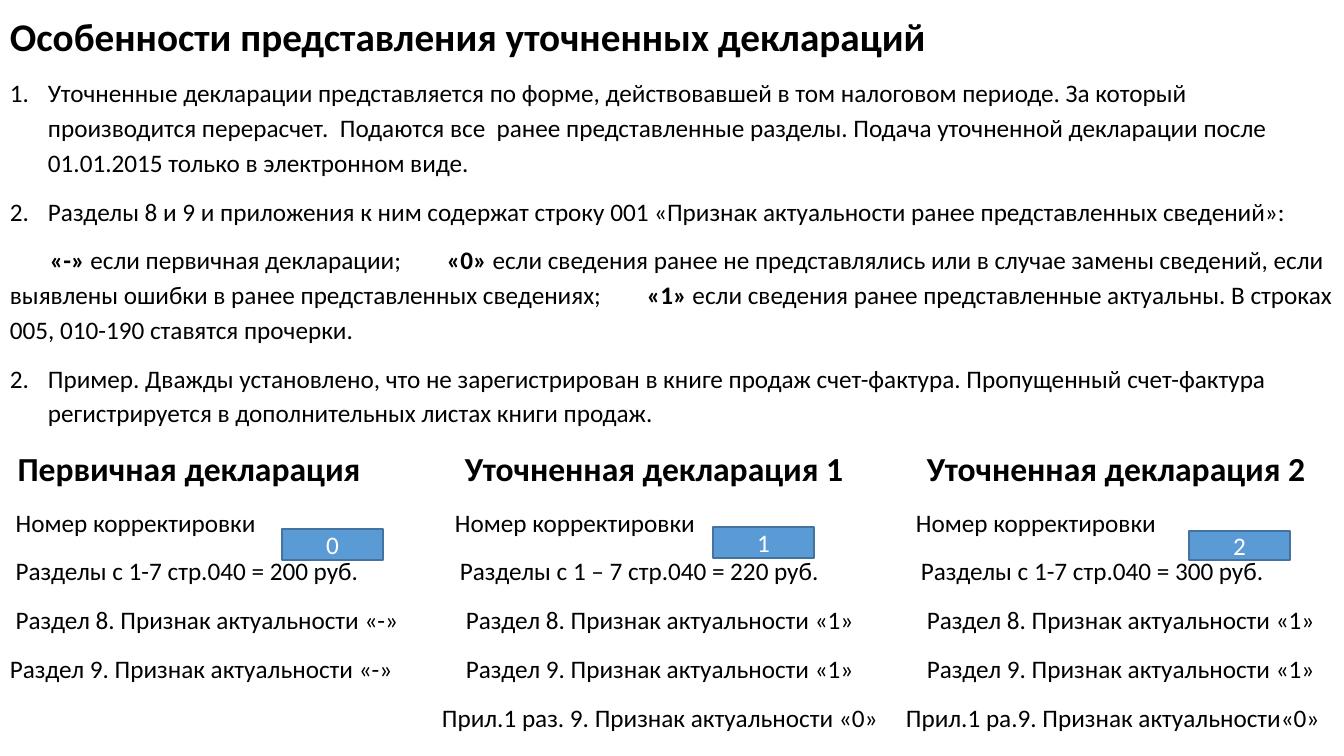
"""Build the slide on filing amended tax declarations."""
from lxml.etree import SubElement
from pptx import Presentation
from pptx.dml.color import RGBColor
from pptx.enum.shapes import MSO_SHAPE as Shape
from pptx.enum.text import MSO_ANCHOR as Anchor, PP_ALIGN as Align
from pptx.oxml.ns import qn
from pptx.util import Emu, Pt

PX = 914400 / 100.8
BLACK = RGBColor(0x00, 0x00, 0x00)
WHITE = RGBColor(0xFF, 0xFF, 0xFF)
BLUE = RGBColor(0x5B, 0x9B, 0xD5)
DARK_BLUE = RGBColor(0x43, 0x73, 0x9E)


def px(length):
    return Emu(round(length * PX))


def add_text(frame, text, size=18, bold=False, color=BLACK, align=Align.LEFT,
             spacing=1.15, after=10, number=0, tabs=()):
    """Add a paragraph; parts between ** marks switch the bold setting."""
    paragraph = frame.paragraphs[0]
    if paragraph.runs:
        paragraph = frame.add_paragraph()
    paragraph.alignment = align
    paragraph.line_spacing = spacing
    paragraph.space_after = Pt(after)
    properties = paragraph._p.get_or_add_pPr()
    if number:
        properties.set("marL", str(px(38)))
        properties.set("indent", str(px(-38)))
        bullet = SubElement(properties, qn("a:buAutoNum"), type="arabicPeriod")
        if number > 1:
            bullet.set("startAt", str(number))
    if tabs:
        tab_list = SubElement(properties, qn("a:tabLst"))
        for tab in tabs:
            SubElement(tab_list, qn("a:tab"), pos=str(px(tab)), algn="l")
    for index, part in enumerate(text.split("**")):
        run = paragraph.add_run()
        run.text = part
        run.font.name = "Calibri"
        run.font.size = Pt(size)
        run.font.bold = bold != (index % 2 == 1)
        run.font.color.rgb = color


presentation = Presentation()
presentation.slide_width = px(1344)
presentation.slide_height = px(756)
slide = presentation.slides.add_slide(presentation.slide_layouts[6])

body = slide.shapes.add_textbox(0, 0, px(1344), px(756)).text_frame
body.word_wrap = True

add_text(body, "Особенности представления уточненных деклараций", size=28, bold=True)
add_text(body, "Уточненные декларации представляется по форме, действовавшей в том "
         "налоговом периоде. За который производится перерасчет.  Подаются все  ранее "
         "представленные разделы. Подача уточненной декларации после 01.01.2015 "
         "только в электронном виде.", number=1)
add_text(body, "Разделы 8 и 9 и приложения к ним содержат строку 001 «Признак "
         "актуальности ранее представленных сведений»:", number=1)
add_text(body, "\t**«-»** если первичная декларации;\t**«0»** если сведения ранее не "
         "представлялись или в случае замены сведений, если выявлены ошибки в ранее "
         "представленных сведениях;\t**«1»** если сведения ранее представленные "
         "актуальны. В строках 005, 010-190 ставятся прочерки.", tabs=(40, 437, 637))
add_text(body, "Пример. Дважды установлено, что не зарегистрирован в книге продаж "
         "счет-фактура. Пропущенный счет-фактура регистрируется в дополнительных "
         "листах книги продаж.", number=2)

add_text(body, " Первичная декларация\tУточненная декларация 1\tУточненная декларация 2",
         size=24, bold=True, tabs=(455, 917))

comparison_rows = [
    ((445, 906), [" Номер корректировки", "Номер корректировки", "Номер корректировки"]),
    ((450, 911), [" Разделы с 1-7 стр.040 = 200 руб.",
                  "Разделы с 1 – 7 стр.040 = 220 руб.",
                  "Разделы с 1-7 стр.040 = 300 руб."]),
    ((456, 917), [" Раздел 8. Признак актуальности «-»",
                  "Раздел 8. Признак актуальности «1»",
                  "Раздел 8. Признак актуальности «1»"]),
    ((456, 917), [f"Раздел 9. Признак актуальности «{sign}»" for sign in "-11"]),
    ((432, 896), ["", "Прил.1 раз. 9. Признак актуальности «0»",
                  "Прил.1 ра.9. Признак актуальности«0»"]),
]
for tabs, cells in comparison_rows:
    add_text(body, "\t".join(cells), tabs=tabs)

correction_boxes = [(282, 529, 31), (713, 527, 31), (1189, 531, 29)]
for correction, (left, top, height) in enumerate(correction_boxes):
    box = slide.shapes.add_shape(Shape.RECTANGLE, px(left), px(top), px(101), px(height))
    box.shadow.inherit = False
    box.fill.solid()
    box.fill.fore_color.rgb = BLUE
    box.line.color.rgb = DARK_BLUE
    box.line.width = Pt(1)
    box.text_frame.vertical_anchor = Anchor.MIDDLE
    add_text(box.text_frame, str(correction), color=WHITE, align=Align.CENTER,
             spacing=1.0, after=0)

presentation.save("out.pptx")
